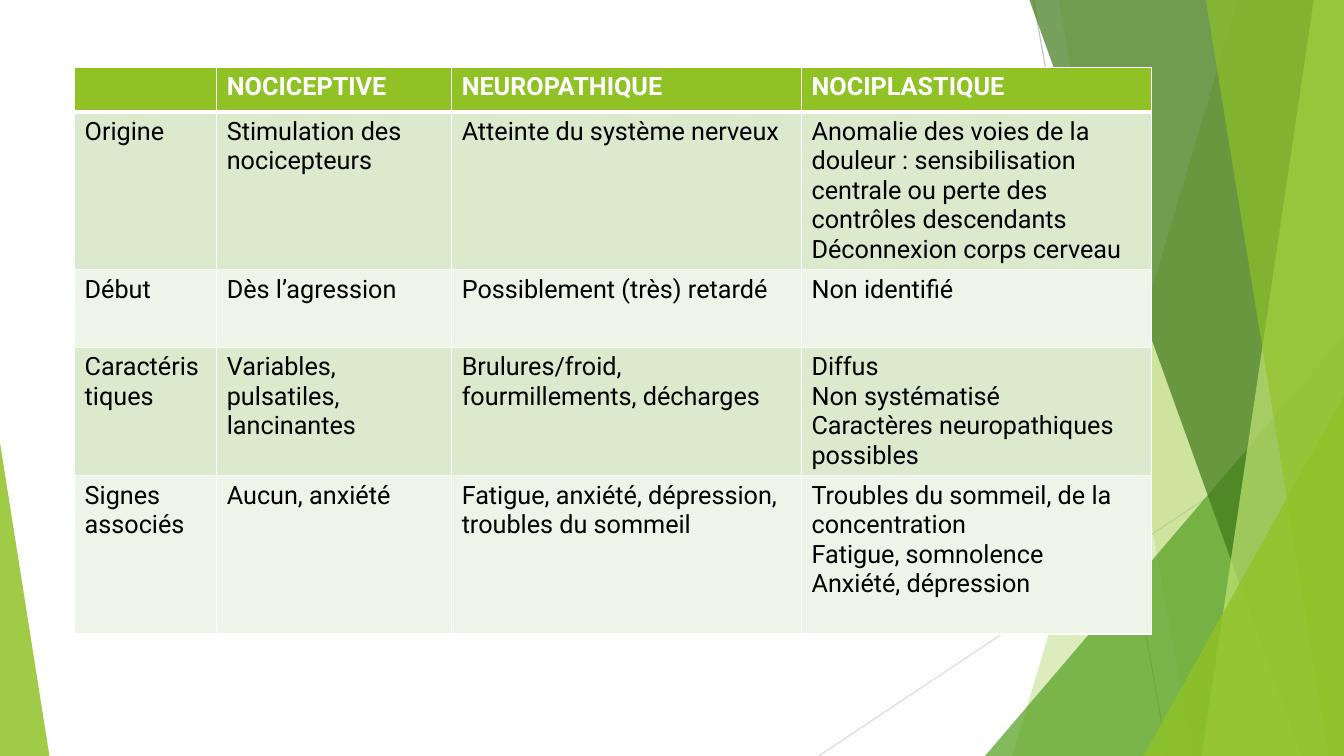
from lxml.etree import SubElement
from pptx import Presentation
from pptx.dml.color import RGBColor
from pptx.enum.shapes import MSO_CONNECTOR as Link, MSO_SHAPE as Shape
from pptx.oxml import parse_xml
from pptx.oxml.ns import nsdecls, qn
from pptx.util import Inches, Pt

WIDE, HIGH = 13.33, 7.5
FONT = "Roboto"
HUES = {
    "lime": "90C226", "leaf": "54A021", "dark": "3F7819", "pale": "C0E474",
    "white": "FFFFFF", "black": "000000", "odd": "DBE9CD", "even": "EEF4E8",
    "grey": "BFBFBF", "mist": "D9D9D9",
}
COLS = [1.41, 2.33, 3.47, 3.47]
ROWS = [0.44, 1.56, 0.77, 1.27, 1.57]
CELLS = [
    ["", "NOCICEPTIVE", "NEUROPATHIQUE", "NOCIPLASTIQUE"],
    ["Origine", "Stimulation des nocicepteurs", "Atteinte du système nerveux",
     "Anomalie des voies de la douleur : sensibilisation centrale ou perte des "
     "contrôles descendants\nDéconnexion corps cerveau"],
    ["Début", "Dès l’agression", "Possiblement (très) retardé", "Non identifié"],
    ["Caractéristiques", "Variables, pulsatiles, lancinantes",
     "Brulures/froid, fourmillements, décharges",
     "Diffus\nNon systématisé\nCaractères neuropathiques possibles"],
    ["Signes associés", "Aucun, anxiété",
     "Fatigue, anxiété, dépression, troubles du sommeil",
     "Troubles du sommeil, de la concentration\nFatigue, somnolence\n"
     "Anxiété, dépression"],
]


def color(name):
    return RGBColor.from_string(HUES[name])


def paint(shape, hue, alpha):
    """Fill without outline or shadow; alpha is the opacity in percent."""
    shape.shadow.inherit = False
    shape.line.fill.background()
    shape.fill.solid()
    shape.fill.fore_color.rgb = color(hue)
    tint = shape.fill._xPr.find(qn("a:solidFill"))[0]
    SubElement(tint, qn("a:alpha")).set("val", str(alpha * 1000))


def add_line(slide, start, end, hue):
    line = slide.shapes.add_connector(
        Link.STRAIGHT, *[Inches(v) for v in (*start, *end)])
    line.line.color.rgb = color(hue)
    line.line.width = Pt(0.75)
    SubElement(line._element.spPr, qn("a:effectLst"))


def add_band(slide, top, foot, hue, alpha):
    """Band from a slanted left edge to the right side of the slide."""
    pen = slide.shapes.build_freeform(Inches(top), 0)
    corners = [(WIDE, 0), (WIDE, HIGH), (foot, HIGH)]
    pen.add_line_segments([(Inches(x), Inches(y)) for x, y in corners])
    paint(pen.convert_to_shape(), hue, alpha)


def add_wedge(slide, left, top, width, peak, hue, alpha):
    """Triangle standing on the bottom edge, with its peak at a share of its width."""
    wedge = slide.shapes.add_shape(
        Shape.ISOSCELES_TRIANGLE, *[Inches(v) for v in (left, top, width, HIGH - top)])
    wedge.adjustments[0] = peak
    paint(wedge, hue, alpha)


def add_decor(slide):
    add_line(slide, (10.25, 0), (11.58, HIGH), "grey")
    add_line(slide, (WIDE, 4.03), (8.12, HIGH), "mist")
    add_band(slide, 12.28, 10.04, "lime", 30)
    add_band(slide, 10.5, 11.83, "lime", 20)
    add_wedge(slide, 9.77, 3.33, 3.56, 1, "leaf", 72)
    add_band(slide, 10.21, 12.91, "dark", 70)
    add_band(slide, 13.03, 11.92, "pale", 70)
    add_band(slide, 11.96, 13.18, "lime", 65)
    add_wedge(slide, 11.34, 3.93, 1.99, 1, "lime", 80)
    add_wedge(slide, 0, 4.39, 0.49, 0, "lime", 85)


def add_edges(cell, widths):
    """White borders, widths in points by side."""
    props = cell._tc.get_or_add_tcPr()
    for spot, (side, width) in enumerate(widths.items()):
        props.insert(spot, parse_xml(
            f'<a:ln{side} {nsdecls("a")} w="{Pt(width)}"><a:solidFill>'
            f'<a:srgbClr val="{HUES["white"]}"/></a:solidFill></a:ln{side}>'))


def fill_cell(cell, text, row):
    head = row == 0
    cell.text = text
    cell.fill.solid()
    cell.fill.fore_color.rgb = color("lime" if head else "odd" if row % 2 else "even")
    for par in cell.text_frame.paragraphs:
        par.font.name = FONT
        par.font.size = Pt(18)
        par.font.bold = head
        par.font.color.rgb = color("white" if head else "black")
    add_edges(cell, {"L": 1, "R": 1, "T": 3 if row == 1 else 1, "B": 3 if head else 1})


def add_grid(slide, left, top):
    box = [Inches(v) for v in (left, top, sum(COLS), sum(ROWS))]
    table = slide.shapes.add_table(len(ROWS), len(COLS), *box).table
    for col, width in zip(table.columns, COLS):
        col.width = Inches(width)
    for row, height in zip(table.rows, ROWS):
        row.height = Inches(height)
    for r, texts in enumerate(CELLS):
        for c, text in enumerate(texts):
            fill_cell(table.cell(r, c), text, r)


def main():
    deck = Presentation()
    deck.slide_width, deck.slide_height = Inches(WIDE), Inches(HIGH)
    slide = deck.slides.add_slide(deck.slide_layouts[6])
    add_decor(slide)
    add_grid(slide, 0.74, 0.67)
    deck.save("out.pptx")


if __name__ == "__main__":
    main()
